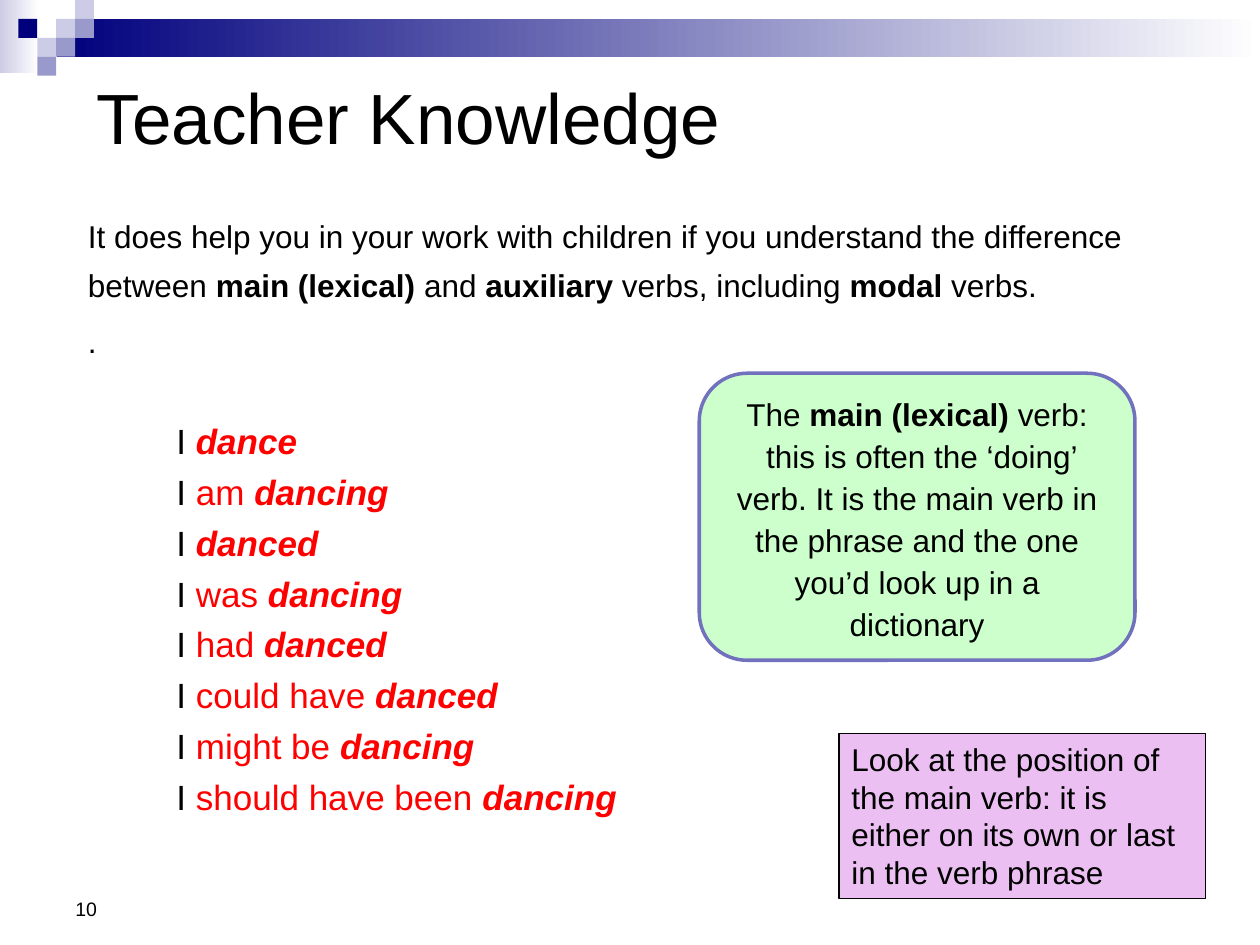
import pptx
import pptx.util
import pptx.dml.color
import pptx.enum.shapes
import pptx.enum.text

Pt = pptx.util.Pt
Shape = pptx.enum.shapes.MSO_SHAPE
Anchor = pptx.enum.text.MSO_ANCHOR
Align = pptx.enum.text.PP_ALIGN

NAVY, LILAC, VIOLET = "00007D", "CCCCE6", "9999CC"
BLACK, WHITE, RED = "000000", "FFFFFF", "FF0000"

INTRO = [
    ("It does help you in your work with children if you understand the difference between ", ""),
    ("main (lexical)", "b"), (" and ", ""), ("auxiliary ", "b"),
    ("verbs, including ", ""), ("modal", "b"), (" verbs.", ""),
]
PHRASES = [
    ("", "dance"), ("am ", "dancing"), ("", "danced"), ("was ", "dancing"),
    ("had ", "danced"), ("could have ", "danced"), ("might be ", "dancing"),
    ("should have been ", "dancing"),
]
DEFINITION = [
    [("The ", ""), ("main (lexical)", "b"), (" verb:", "")],
    [(" this is often the ‘doing’ verb. It is the main verb in the phrase "
      "and the one you’d look up in a dictionary", "")],
]
ADVICE = ("Look at the position of the main verb: it is either on its own "
          "or last in the verb phrase")


def color(value):
    """Turn a hex string into a colour."""
    return pptx.dml.color.RGBColor.from_string(value)


def add_panel(page, box, fill, kind=Shape.RECTANGLE, line=None, fade=None):
    """Add a filled shape, optionally outlined or fading rightwards."""
    panel = page.shapes.add_shape(kind, *map(Pt, box))
    panel.shadow.inherit = False
    if fade:
        panel.fill.gradient()
        panel.fill.gradient_angle = 0
        for stop, value, position in zip(panel.fill.gradient_stops, (fill, fade), (0, 1)):
            stop.color.rgb = color(value)
            stop.position = position
    else:
        panel.fill.solid()
        panel.fill.fore_color.rgb = color(fill)
    if line:
        panel.line.color.rgb = color(line[0])
        panel.line.width = Pt(line[1])
    else:
        panel.line.fill.background()
    return panel


def write(frame, lines, size, anchor=Anchor.TOP, align=Align.LEFT, spacing=None):
    """Fill a text frame with lines of (text, style) spans."""
    frame.word_wrap = True
    frame.vertical_anchor = anchor
    for index, spans in enumerate(lines):
        para = frame.add_paragraph() if index else frame.paragraphs[0]
        para.alignment = align
        para.font.name = "Arial"
        para.font.size = Pt(size)
        para.font.color.rgb = color(BLACK)
        if spacing:
            para.line_spacing = Pt(spacing)
        for text, style in spans:
            span = para.add_run()
            span.text = text
            if "b" in style:
                span.font.bold = True
            if "i" in style:
                span.font.italic = True
            if "r" in style:
                span.font.color.rgb = color(RED)


def add_text(page, box, lines, size, **layout):
    """Add a text box and return its frame."""
    frame = page.shapes.add_textbox(*map(Pt, box)).text_frame
    write(frame, lines, size, **layout)
    return frame


def add_banner(page, box):
    """Add the fading bars and the staggered squares across the top."""
    left, top, width, height = box
    side = height / 4
    add_panel(page, (left, top, 22.3, 41.8), LILAC, fade=WHITE)
    add_panel(page, (left + 32.4, top + side, width - 32.4, 2 * side), NAVY, fade=WHITE)
    squares = [(2, 1, LILAC), (3, 0, LILAC), (3, 1, VIOLET), (1, 2, LILAC),
               (0, 1, NAVY), (2, 2, VIOLET), (1, 3, VIOLET)]
    for column, row, fill in squares:
        add_panel(page, (left + 10.5 + column * side, top + row * side, side, side), fill)


def add_body(page, box):
    """Add the introduction and the indented verb phrases."""
    phrases = [[("I ", ""), (helper, "r"), (verb, "bir")] if helper
               else [("I ", ""), (verb, "bir")] for helper, verb in PHRASES]
    frame = add_text(page, box, [INTRO, [(".", "")]] + phrases, 18)
    for index, para in enumerate(frame.paragraphs):
        if index < 2:
            para.line_spacing = Pt(28)
            para.space_before = Pt(4 * index)
            indent = 6.5
        else:
            para.font.size = Pt(20)
            para.space_before = Pt(34.5 if index == 2 else 5)
            indent = 57
        para._p.get_or_add_pPr().set("marL", str(Pt(indent)))


def add_callouts(page, box):
    """Add the rounded definition and the advice note below it."""
    left, top, width, height = box
    definition = add_panel(page, (left, top, 249, 164), "CCFFCC",
                           Shape.ROUNDED_RECTANGLE, ("7171BD", 2))
    write(definition.text_frame, DEFINITION, 18, Anchor.MIDDLE, Align.CENTER, 24)
    advice = add_panel(page, (left + width - 209.5, top + height - 94.3, 209.5, 94.3),
                       "ECBFF3", line=(BLACK, 0.75))
    write(advice.text_frame, [[(ADVICE, "")]], 18)


def main():
    """Build the slide and save it."""
    deck = pptx.Presentation()
    deck.slide_width, deck.slide_height = Pt(720), Pt(540)
    page = deck.slides.add_slide(deck.slide_layouts[6])
    add_banner(page, (0, 0, 720, 43.2))
    add_text(page, (48.2, 21.6, 655, 90), [[("Teacher Knowledge", "")]], 40.6,
             anchor=Anchor.MIDDLE)
    add_body(page, (36.7, 113.8, 674.6, 378))
    add_text(page, (36, 491.8, 168, 37.4), [[("10", "")]], 11.1, anchor=Anchor.BOTTOM)
    add_callouts(page, (399.6, 213.3, 289.3, 300.2))
    deck.save("out.pptx")


if __name__ == "__main__":
    main()
